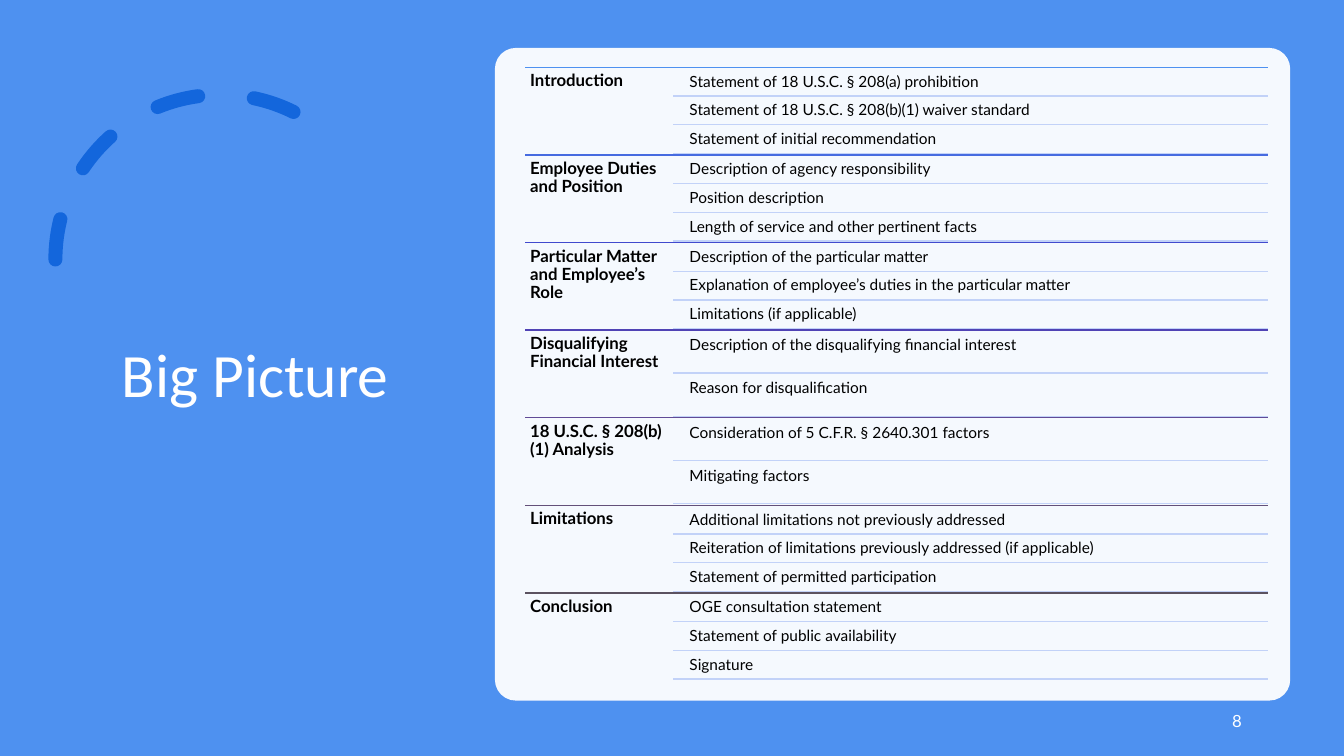
from dataclasses import dataclass

from lxml.etree import SubElement
from pptx import Presentation
from pptx.dml.color import RGBColor
from pptx.enum.dml import MSO_LINE
from pptx.enum.shapes import MSO_CONNECTOR, MSO_SHAPE
from pptx.enum.text import MSO_ANCHOR, MSO_AUTO_SIZE, PP_ALIGN
from pptx.oxml.ns import qn
from pptx.util import Pt


@dataclass(frozen=True)
class Theme:
    """Colours, fonts and type sizes of the slide."""
    background: str = "4E91F0"
    arc: str = "1366DC"
    white: str = "FFFFFF"
    text: str = "000000"
    row_rule: str = "C2D2F8"
    title_font: str = "Calibri"
    body_font: str = "Lato"
    title_size: float = 44
    heading_size: float = 12
    item_size: float = 11
    number_size: float = 12


THEME = Theme()
LEFT, ITEM_RULE_LEFT, ITEM_LEFT, RIGHT = 375.1, 481, 488.9, 905.8
TOP, SECTION_PITCH, ROWS_HEIGHT = 48.1, 62.57, 61.5
ROW_GAP = 0.05

SECTIONS = [
    ("Introduction", "4E91F0", [
        "Statement of 18 U.S.C. § 208(a) prohibition",
        "Statement of 18 U.S.C. § 208(b)(1) waiver standard",
        "Statement of initial recommendation"]),
    ("Employee Duties and Position", "466BE0", [
        "Description of agency responsibility",
        "Position description",
        "Length of service and other pertinent facts"]),
    ("Particular Matter and Employee’s Role", "414ACE", [
        "Description of the particular matter",
        "Explanation of employee’s duties in the particular matter",
        "Limitations (if applicable)"]),
    ("Disqualifying Financial Interest", "5043B5", [
        "Description of the disqualifying financial interest",
        "Reason for disqualification"]),
    ("18 U.S.C. § 208(b)(1) Analysis", "614B96", [
        "Consideration of 5 C.F.R. § 2640.301 factors",
        "Mitigating factors"]),
    ("Limitations", "635079", [
        "Additional limitations not previously addressed",
        "Reiteration of limitations previously addressed (if applicable)",
        "Statement of permitted participation"]),
    ("Conclusion", "5B5260", [
        "OGE consultation statement",
        "Statement of public availability",
        "Signature"]),
]


def color(value):
    """Return the RGB colour for a hex value."""
    return RGBColor.from_string(value)


def write_text(shape, text, font, size, fill, bold=False,
               align=PP_ALIGN.LEFT, anchor=MSO_ANCHOR.TOP, spacing=0.9):
    """Write one formatted run into the shape."""
    frame = shape.text_frame
    frame.word_wrap = True
    frame.auto_size = MSO_AUTO_SIZE.NONE
    frame.vertical_anchor = anchor
    paragraph = frame.paragraphs[0]
    paragraph.alignment = align
    paragraph.line_spacing = spacing
    run = paragraph.add_run()
    run.text = text
    run.font.name = font
    run.font.size = Pt(size)
    run.font.bold = bold
    run.font.color.rgb = color(fill)


def add_title(slide, text):
    """Place and fill the title placeholder."""
    title = slide.shapes.title
    title.left, title.top, title.width, title.height = (
        Pt(66.2), Pt(50.4), Pt(232.6), Pt(438.5))
    write_text(title, text, THEME.title_font, THEME.title_size, THEME.white,
               align=PP_ALIGN.CENTER, anchor=MSO_ANCHOR.MIDDLE)


def add_dashed_arc(slide):
    """Draw the round-capped dashed arc above the title."""
    arc = slide.shapes.add_shape(
        MSO_SHAPE.ARC, Pt(39.6), Pt(67.7), Pt(235.4), Pt(235.4))
    arc.shadow.inherit = False
    arc.adjustments[0] = 146.13
    arc.adjustments[1] = 0
    arc.fill.background()
    arc.line.color.rgb = color(THEME.arc)
    arc.line.width = Pt(10)
    arc.line.dash_style = MSO_LINE.DASH
    properties = arc.element.spPr
    properties.find(qn("a:xfrm")).set("flipH", "1")
    properties.find(qn("a:ln")).set("cap", "rnd")


def add_panel(slide):
    """Draw the translucent rounded panel behind the outline."""
    panel = slide.shapes.add_shape(
        MSO_SHAPE.ROUNDED_RECTANGLE, Pt(353.5), Pt(34.2), Pt(568.1), Pt(466.2))
    panel.shadow.inherit = False
    panel.adjustments[0] = 0.032
    panel.fill.solid()
    panel.fill.fore_color.rgb = color(THEME.white)
    panel.line.fill.background()
    fill = panel.element.spPr.find(qn("a:solidFill"))
    SubElement(fill[0], qn("a:alpha"), val="95000")


def add_rule(slide, left, y, fill):
    """Draw a horizontal rule to the right edge of the outline."""
    rule = slide.shapes.add_connector(
        MSO_CONNECTOR.STRAIGHT, Pt(left), Pt(y), Pt(RIGHT), Pt(y))
    rule.line.color.rgb = color(fill)
    rule.line.width = Pt(1)
    SubElement(rule.element.spPr, qn("a:effectLst"))


def add_label(slide, text, left, top, width, height, size, bold=False):
    """Add a text box with tight, even insets."""
    label = slide.shapes.add_textbox(Pt(left), Pt(top), Pt(width), Pt(height))
    frame = label.text_frame
    frame.margin_left = frame.margin_right = Pt(3.6)
    frame.margin_top = frame.margin_bottom = Pt(3.6)
    write_text(label, text, THEME.body_font, size, THEME.text, bold)


def add_section(slide, top, heading, rule_color, items):
    """Add a heading with its evenly spaced, ruled items."""
    add_rule(slide, LEFT, top, rule_color)
    add_label(slide, heading, LEFT, top, ITEM_RULE_LEFT - LEFT, SECTION_PITCH,
              THEME.heading_size, bold=True)
    pitch = ROWS_HEIGHT / len(items)
    for index, item in enumerate(items):
        row_top = top + index * pitch
        add_label(slide, item, ITEM_LEFT, row_top + pitch * ROW_GAP,
                  RIGHT - ITEM_LEFT, pitch * (1 - ROW_GAP), THEME.item_size)
        add_rule(slide, ITEM_RULE_LEFT, row_top + pitch, THEME.row_rule)


def add_slide_number(slide, number):
    """Add the slide number at the lower right."""
    box = slide.shapes.add_textbox(Pt(678.2), Pt(500.4), Pt(216), Pt(28.8))
    write_text(box, number, THEME.body_font, THEME.number_size, THEME.white,
               align=PP_ALIGN.RIGHT, anchor=MSO_ANCHOR.MIDDLE, spacing=1.0)


def main():
    """Build and save the slide."""
    presentation = Presentation()
    presentation.slide_width = Pt(960)
    presentation.slide_height = Pt(540)
    slide = presentation.slides.add_slide(presentation.slide_layouts[5])
    slide.background.fill.solid()
    slide.background.fill.fore_color.rgb = color(THEME.background)
    add_dashed_arc(slide)
    add_title(slide, "Big Picture")
    add_panel(slide)
    add_slide_number(slide, "8")
    for index, section in enumerate(SECTIONS):
        add_section(slide, TOP + index * SECTION_PITCH, *section)
    presentation.save("out.pptx")


if __name__ == "__main__":
    main()
